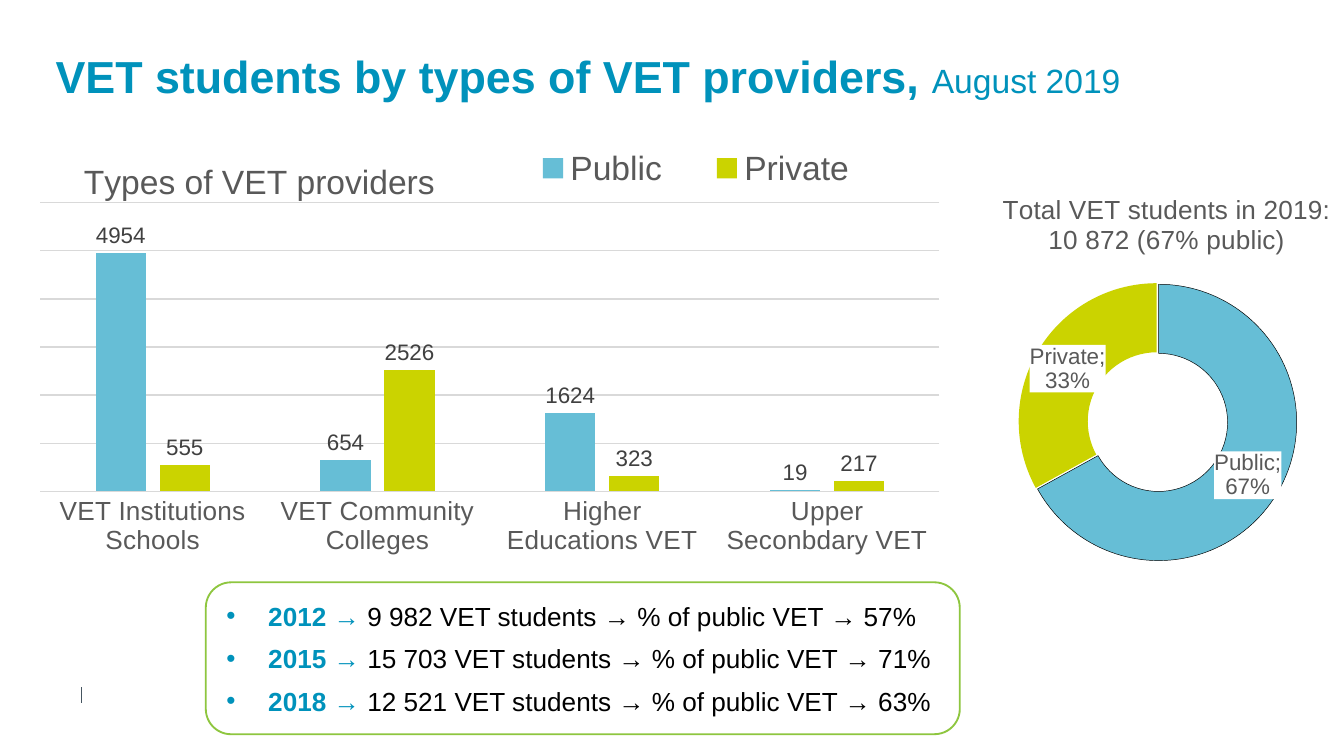
import pptx
import pptx.chart.data
import pptx.dml.color
import pptx.enum.chart
import pptx.enum.shapes
import pptx.enum.text
import pptx.oxml.ns
import pptx.util
from lxml import etree

Cm, Pt = pptx.util.Cm, pptx.util.Pt
qn = pptx.oxml.ns.qn
XL = pptx.enum.chart
ALIGN = pptx.enum.text.PP_ALIGN
MIDDLE = pptx.enum.text.MSO_ANCHOR.MIDDLE

BLUE, BLACK, WHITE = "0092BB", "000000", "FFFFFF"
GREY, GRID = "595959", "D9D9D9"
SECTORS = {"Public": "66BED6", "Private": "CBD300"}


def rgb(value):
    return pptx.dml.color.RGBColor.from_string(value)


def set_font(font, size, color, bold=False):
    font.name = "Arial"
    font.size = Pt(size)
    font.bold = bold
    font.color.rgb = rgb(color)


def set_fill(fill, color):
    fill.solid()
    fill.fore_color.rgb = rgb(color)


def set_line(line, color, width):
    line.color.rgb = rgb(color)
    line.width = Pt(width)


def chart_fill(color=None):
    """Return a chart spPr with the given fill, or none, and no outline."""
    sp_pr = etree.Element(qn("c:spPr"))
    if color:
        fill = etree.SubElement(sp_pr, qn("a:solidFill"))
        etree.SubElement(fill, qn("a:srgbClr"), val=color)
    else:
        etree.SubElement(sp_pr, qn("a:noFill"))
    etree.SubElement(etree.SubElement(sp_pr, qn("a:ln")), qn("a:noFill"))
    return sp_pr


def place(element, x, y, w=None, h=None, inner=False):
    """Give a chart part a manual layout, in fractions of the chart."""
    layout = element.find(qn("c:layout"))
    if layout is None:
        layout = etree.Element(qn("c:layout"))
        overlay = element.find(qn("c:overlay"))
        if overlay is None:
            element.insert(0, layout)
        else:
            overlay.addprevious(layout)
    manual = etree.SubElement(layout, qn("c:manualLayout"))
    values = [("layoutTarget", "inner" if inner else None),
              ("xMode", "edge"), ("yMode", "edge"),
              ("x", x), ("y", y), ("w", w), ("h", h)]
    for tag, value in values:
        if value is not None:
            etree.SubElement(manual, qn("c:" + tag), val=str(value))


class Deck:
    def __init__(self, width, height):
        self.prs = pptx.Presentation()
        self.prs.slide_width, self.prs.slide_height = Cm(width), Cm(height)
        self.s = self.prs.slides.add_slide(self.prs.slide_layouts[6])

    def run(self, p, text, size, color, bold=False):
        r = p.add_run()
        r.text = text
        set_font(r.font, size, color, bold)

    def title(self, box, runs):
        tf = self.s.shapes.add_textbox(*map(Cm, box)).text_frame
        tf.word_wrap = True
        tf.vertical_anchor = MIDDLE
        tf.margin_left = tf.margin_right = tf.margin_top = tf.margin_bottom = 0
        p = tf.paragraphs[0]
        p.alignment = ALIGN.CENTER
        p.line_spacing = 0.9
        for run in runs:
            self.run(p, *run)

    def rule(self, x, top, bottom, color, width):
        line = self.s.shapes.add_connector(
            pptx.enum.shapes.MSO_CONNECTOR.STRAIGHT,
            Cm(x), Cm(top), Cm(x), Cm(bottom))
        set_line(line.line, color, width)
        etree.SubElement(line._element.spPr, qn("a:effectLst"))

    def bullet_box(self, box, rows):
        sp = self.s.shapes.add_shape(
            pptx.enum.shapes.MSO_SHAPE.FLOWCHART_ALTERNATE_PROCESS,
            *map(Cm, box))
        sp.shadow.inherit = False
        set_fill(sp.fill, WHITE)
        set_line(sp.line, "8EC63F", 1)
        tf = sp.text_frame
        tf.word_wrap = True
        tf.vertical_anchor = MIDDLE
        for i, (year, text) in enumerate(rows):
            p = tf.add_paragraph() if i else tf.paragraphs[0]
            p.alignment = ALIGN.LEFT
            p.space_after = Pt(6)
            p_pr = p._p.get_or_add_pPr()
            p_pr.set("marL", str(Cm(0.79)))
            p_pr.set("indent", str(Cm(-0.79)))
            etree.SubElement(p_pr, qn("a:buFont"), typeface="Arial")
            etree.SubElement(p_pr, qn("a:buChar"), char="•")
            self.run(p, f"{year} → ", 14, BLUE, True)
            self.run(p, text, 14, BLACK)

    def chart(self, kind, box, categories, series, title, size, title_at, plot):
        data = pptx.chart.data.CategoryChartData()
        data.categories = categories
        for name, values in series:
            data.add_series(name, values)
        chart = self.s.shapes.add_chart(kind, *map(Cm, box), data).chart
        set_font(chart.font, 10, BLACK)
        space = chart._chartSpace
        space.find(qn("c:txPr")).addprevious(chart_fill())
        chart.has_title = True
        p = chart.chart_title.text_frame.paragraphs[0]
        for i, line in enumerate(title):
            if i:
                p.add_line_break()
            self.run(p, line, size, GREY)
        place(chart.chart_title._element, *title_at)
        place(space.chart.plotArea, *plot, inner=True)
        chart.has_legend = False
        return chart

    def column_chart(self, *args):
        chart = self.chart(XL.XL_CHART_TYPE.COLUMN_CLUSTERED, *args)
        chart.has_legend = True
        legend = chart.legend
        legend.position = XL.XL_LEGEND_POSITION.BOTTOM
        legend.include_in_layout = False
        set_font(legend.font, 18, GREY)
        place(legend._element, 0.51, 0.03, 0.42, 0.1)

        values = chart.value_axis
        values.minimum_scale, values.maximum_scale = 0, 6000
        values.major_unit = 1000
        values.visible = False
        set_line(values.major_gridlines.format.line, GRID, 0.75)
        axis = chart.category_axis
        axis.major_tick_mark = XL.XL_TICK_MARK.NONE
        set_line(axis.format.line, GRID, 0.75)
        set_font(axis.tick_labels.font, 14, GREY)

        plot = chart.plots[0]
        plot.vary_by_categories = False
        plot.gap_width, plot.overlap = 219, -27
        for series in plot.series:
            set_fill(series.format.fill, SECTORS[series.name])
            labels = series.data_labels
            labels.show_value = True
            labels.position = XL.XL_LABEL_POSITION.OUTSIDE_END
            set_font(labels.font, 12, "404040")

    def doughnut_chart(self, *args):
        chart = self.chart(XL.XL_CHART_TYPE.DOUGHNUT, *args)
        plot = chart.plots[0]
        plot.vary_by_categories = True
        plot._element.find(qn("c:holeSize")).set("val", "75")
        series = plot.series[0]
        public, private = (series.points[i].format for i in range(2))
        for part, color in zip((public, private), SECTORS.values()):
            set_fill(part.fill, color)
        set_line(public.line, BLACK, 0.25)
        private.line.fill.background()
        sp_pr = series._element.findall(qn("c:dPt"))[1].find(qn("c:spPr"))
        sp_pr.addprevious(etree.Element(qn("c:explosion"), val="3"))

        labels = series.data_labels
        labels.show_value = False
        labels.show_category_name = labels.show_percentage = True
        set_font(labels.font, 12, GREY)
        element = labels._element
        element.find(qn("c:txPr")).addprevious(chart_fill(WHITE))
        separator = etree.Element(qn("c:separator"))
        separator.text = ";\n"
        element.find(qn("c:showBubbleSize")).addnext(separator)


def main():
    deck = Deck(25.4, 14.28)
    deck.rule(1.53, 12.98, 13.28, "455560", 0.25)
    deck.title((0, 0.97, 22.23, 1.04), [
        ("VET students by types of VET providers, ", 24, BLUE, True),
        ("August 2019", 18, BLUE)])
    deck.bullet_box((3.89, 11, 14.25, 2.87), [
        (2012, "9 982 VET students → % of public VET → 57%"),
        (2015, "15 703 VET students → % of public VET → 71%"),
        (2018, "12 521 VET students → % of public VET → 63%")])
    deck.column_chart(
        (0.41, 2.44, 17.7, 9.25),
        ["VET Institutions Schools", "VET Community Colleges",
         "Higher Educations VET", "Upper Seconbdary VET"],
        [("Public", (4954, 654, 1624, 19)), ("Private", (555, 2526, 323, 217))],
        ["Types of VET providers"], 18, (0.06, 0.05), (0.02, 0.15, 0.96, 0.59))
    deck.doughnut_chart(
        (17.48, 3.23, 8.18, 8.56), list(SECTORS), [("Series 1", (67, 33))],
        ["Total VET students in 2019:", "10 872 (67% public)"], 14,
        (0.17, 0.04), (0.22, 0.25, 0.64, 0.61))
    deck.prs.save("out.pptx")


if __name__ == "__main__":
    main()
